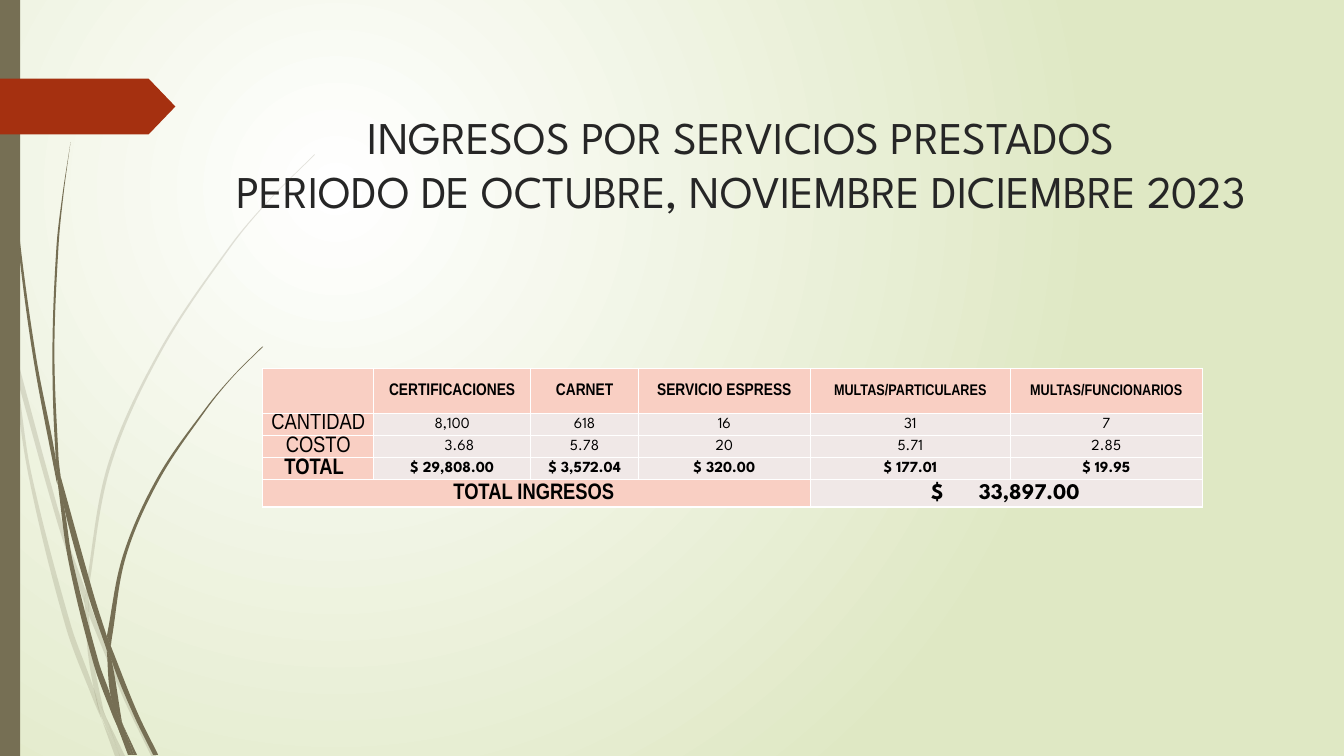
import math

from lxml import etree
from pptx import Presentation
from pptx import util as u
from pptx.dml.color import RGBColor
from pptx.enum import shapes, text
from pptx.oxml.ns import qn

Pt = u.Pt
COLORS = {
    "olive": "766F54", "rust": "A53010", "title": "262626", "ink": "000000",
    "white": "FFFFFF", "lime": "DFE8C4", "head": "F9CFC3", "body": "F0E8E7",
}
NARROW, SPARTAN = "Arial Narrow", "League Spartan"

GRID = 0.72
PALE_BLADES = [
    ([(0, 282), (9, 322), (11, 350)], [(0, 299), (10, 344), (11, 350)]),
    ([(14, 345), (62, 520), (85, 586)], [(17, 376), (58, 522), (84, 599)]),
    ([(88, 596), (92, 607), (127, 692), (155, 750)], [(88, 610), (123, 694), (150, 750)]),
    ([(105, 711), (124, 750)], [(105, 711), (119, 750)]),
    ([(11, 350), (17, 376), (31, 469), (70, 619), (93, 683), (101, 714)],
     [(11, 350), (28, 470), (65, 621), (92, 693), (101, 714)]),
    ([(84, 599), (88, 610), (91, 646), (103, 706), (105, 711)],
     [(84, 599), (87, 646), (93, 683), (96, 692), (105, 711)]),
    ([(312, 153), (268, 197), (228, 244), (158, 348), (107, 461), (85, 584), (85, 586)],
     [(312, 154), (268, 198), (229, 245), (160, 349), (110, 462), (88, 584), (88, 596)]),
    ([(101, 714), (114, 750)], [(101, 714), (119, 750)]),
    ([(85, 586), (84, 599), (88, 608)], [(85, 586), (88, 596), (88, 610)]),
    ([(93, 683), (99, 707), (119, 750)], [(93, 683), (96, 692), (105, 711), (119, 750)]),
]
DARK_BLADES = [
    ([(3, 0), (4, 48), (7, 110), (17, 233), (33, 355), (56, 477), (57, 481)],
     [(4, 0), (5, 48), (8, 109), (19, 232), (36, 355), (55, 453), (57, 481)]),
    ([(60, 472), (93, 590), (106, 631)], [(60, 472), (64, 505), (88, 592), (106, 645)]),
    ([(110, 641), (136, 706), (157, 749)], [(110, 641), (111, 656), (132, 708), (152, 749)]),
    ([(57, 477), (68, 557), (93, 659), (111, 708), (117, 722)],
     [(57, 477), (64, 505), (72, 556), (98, 657), (110, 691), (117, 722)]),
    ([(70, 141), (62, 193), (56, 245), (52, 349), (55, 449), (60, 472)],
     [(70, 141), (63, 193), (58, 245), (54, 349), (58, 453), (60, 472)]),
    ([(122, 719), (136, 749)], [(122, 719), (133, 749)]),
    ([(55, 449), (57, 477), (64, 505)], [(55, 449), (60, 472), (64, 505)]),
    ([(260, 344), (231, 373), (204, 405), (156, 474), (122, 551), (106, 631)],
     [(261, 344), (231, 374), (205, 406), (158, 476), (125, 552), (111, 633), (110, 641)]),
    ([(117, 722), (127, 749)], [(117, 722), (131, 749)]),
    ([(106, 645), (110, 691), (122, 719)], [(106, 645), (111, 656), (121, 716), (122, 719)]),
    ([(106, 631), (106, 645)], [(106, 631), (110, 641), (111, 656)]),
    ([(110, 691), (117, 722), (131, 749)], [(110, 691), (116, 706), (122, 719), (133, 749)]),
]

HEADERS = ["", "CERTIFICACIONES", "CARNET", "SERVICIO ESPRESS",
           "MULTAS/PARTICULARES", "MULTAS/FUNCIONARIOS"]
ROWS = [
    ["CANTIDAD", "8,100", "618", "16", "31", "7"],
    ["COSTO", "3.68", "5.78", "20", "5.71", "2.85"],
    ["TOTAL", "$ 29,808.00", "$ 3,572.04", "$ 320.00", "$ 177.01", "$ 19.95"],
]
COL_WIDTHS = [79.2, 112.2, 77, 122.6, 143.2, 136.8]
ROW_HEIGHTS = [32.2, 15.8, 15.8, 15.8, 19.6]


def rgb(name):
    return RGBColor.from_string(COLORS[name])


def paint(sp, color, alpha=None):
    sp.shadow.inherit = False
    sp.fill.solid()
    sp.fill.fore_color.rgb = rgb(color)
    sp.line.fill.background()
    if alpha:
        clr = sp._element.spPr.find(".//" + qn("a:srgbClr"))
        etree.SubElement(clr, qn("a:alpha")).set("val", str(alpha * 1000))


def set_background(slide):
    fill = slide.background.fill
    fill.gradient()
    for stop, color, pos in zip(fill.gradient_stops, ("white", "lime"), (0, 1)):
        stop.color.rgb = rgb(color)
        stop.position = pos
    grad = slide.element.find(".//" + qn("a:gradFill"))
    grad.remove(grad.find(qn("a:lin")))
    circle = etree.SubElement(grad, qn("a:path"), {"path": "circle"})
    etree.SubElement(circle, qn("a:fillToRect"),
                     {"l": "50000", "t": "50000", "r": "100000", "b": "100000"})


def bezier_points(edge):
    ends = [edge[0]] + edge + [edge[-1]]
    points = []
    for a, b, c, d in zip(ends, ends[1:], ends[2:], ends[3:]):
        reach = math.dist(b, c) / 3
        out, back = reach / math.dist(a, c), reach / math.dist(b, d)
        points += [(b[0] + (c[0] - a[0]) * out, b[1] + (c[1] - a[1]) * out),
                   (c[0] - (d[0] - b[0]) * back, c[1] - (d[1] - b[1]) * back), c]
    return points


def add_blade(slide, left, right, alpha=None):
    outline = bezier_points(left)
    if left[-1] != right[-1]:
        outline += [left[-1], right[-1], right[-1]]
    outline += bezier_points(right[::-1])
    start, *rest = [(Pt(x * GRID), Pt(y * GRID)) for x, y in [left[0]] + outline]
    builder = slide.shapes.build_freeform(*start)
    builder.add_line_segments(rest, close=True)
    sp = builder.convert_to_shape()
    lines = sp._element.findall(".//" + qn("a:lnTo"))
    for trio in zip(lines[::3], lines[1::3], lines[2::3]):
        curve = etree.Element(qn("a:cubicBezTo"))
        trio[0].addprevious(curve)
        for line in trio:
            curve.append(line[0])
            line.getparent().remove(line)
    paint(sp, "olive", alpha)


def add_block(slide, kind, x, y, w, h, color):
    sp = slide.shapes.add_shape(kind, Pt(x), Pt(y), Pt(w), Pt(h))
    paint(sp, color)
    return sp


def set_font(p, name, size, color, bold=False):
    f = p.font
    f.name, f.size, f.bold = name, Pt(size), bold
    f.color.rgb = rgb(color)


def set_title(slide, title):
    sp = slide.shapes.title
    sp.left, sp.top, sp.width, sp.height = Pt(153.4), Pt(74.2), Pt(752.4), Pt(119.5)
    tf = sp.text_frame
    tf.text = title
    tf.word_wrap = True
    tf.auto_size = text.MSO_AUTO_SIZE.NONE
    tf.vertical_anchor = text.MSO_ANCHOR.TOP
    p = tf.paragraphs[0]
    p.alignment = text.PP_ALIGN.CENTER
    set_font(p, SPARTAN, 32.4, "title")


def style_cell(cell, color):
    cell.fill.solid()
    cell.fill.fore_color.rgb = rgb(color)
    cell.vertical_anchor = text.MSO_ANCHOR.MIDDLE
    cell.margin_left = cell.margin_right = cell.margin_top = Pt(0.7)
    cell.margin_bottom = 0
    for i, side in enumerate(("lnL", "lnR", "lnT", "lnB")):
        ln = etree.Element(qn("a:" + side), {"w": str(Pt(1))})
        fill = etree.SubElement(ln, qn("a:solidFill"))
        etree.SubElement(fill, qn("a:srgbClr"), {"val": COLORS["white"]})
        cell._tc.get_or_add_tcPr().insert(i, ln)


def write_cell(cell, value, name, size, bold=False, align=text.PP_ALIGN.CENTER):
    cell.text = value
    p = cell.text_frame.paragraphs[0]
    p.alignment = align
    set_font(p, name, size, "ink", bold)
    return p


def add_income_table(slide):
    last, n_cols = len(ROW_HEIGHTS) - 1, len(COL_WIDTHS)
    table = slide.shapes.add_table(last + 1, n_cols, Pt(187.7), Pt(263), Pt(sum(COL_WIDTHS)),
                                   Pt(sum(ROW_HEIGHTS))).table
    table.first_row = table.horz_banding = False
    for col, width in zip(table.columns, COL_WIDTHS):
        col.width = Pt(width)
    for r, height in enumerate(ROW_HEIGHTS):
        table.rows[r].height = Pt(height)
        for c in range(n_cols):
            head = r == 0 or c == 0 or (r == last and c < 4)
            style_cell(table.cell(r, c), "head" if head else "body")
    for c, label in enumerate(HEADERS):
        write_cell(table.cell(0, c), label, NARROW, 12 if c < 4 else 11, True)
    for r, (label, *values) in enumerate(ROWS, 1):
        bold = label == "TOTAL"
        align = text.PP_ALIGN.LEFT if bold else text.PP_ALIGN.CENTER
        write_cell(table.cell(r, 0), label, NARROW, 16, bold, align).line_spacing = 0.82
        for c, value in enumerate(values, 1):
            write_cell(table.cell(r, c), value, SPARTAN, 11, bold)
    table.cell(2, 1).margin_left = Pt(11)
    table.cell(3, 0).margin_left = Pt(15.5)

    label, total = table.cell(last, 0), table.cell(last, 4)
    label.merge(table.cell(last, 3))
    total.merge(table.cell(last, 5))
    write_cell(label, "TOTAL INGRESOS", NARROW, 16, True)
    label.margin_right = Pt(4.5)
    p = write_cell(total, "$\t33,897.00", SPARTAN, 16, True, text.PP_ALIGN.LEFT)
    total.margin_left = Pt(86.5)
    tabs = etree.Element(qn("a:tabLst"))
    etree.SubElement(tabs, qn("a:tab"), {"pos": str(Pt(34)), "algn": "l"})
    p._p.get_or_add_pPr().insert(0, tabs)


def main():
    prs = Presentation()
    prs.slide_width, prs.slide_height = Pt(960), Pt(540)
    slide = prs.slides.add_slide(prs.slide_layouts[5])
    set_background(slide)
    for blades, alpha in ((PALE_BLADES, 20), (DARK_BLADES, None)):
        for left, right in blades:
            add_blade(slide, left, right, alpha)
    add_block(slide, shapes.MSO_SHAPE.RECTANGLE, 0, 0, 14.4, 540, "olive")
    tag = add_block(slide, shapes.MSO_SHAPE.PENTAGON, 0, 56.2, 125.3, 39.8, "rust")
    tag.adjustments[0] = 0.48
    set_title(slide, "INGRESOS POR SERVICIOS PRESTADOS\v"
                     "PERIODO DE OCTUBRE, NOVIEMBRE DICIEMBRE 2023")
    add_income_table(slide)
    prs.save("out.pptx")


if __name__ == "__main__":
    main()
